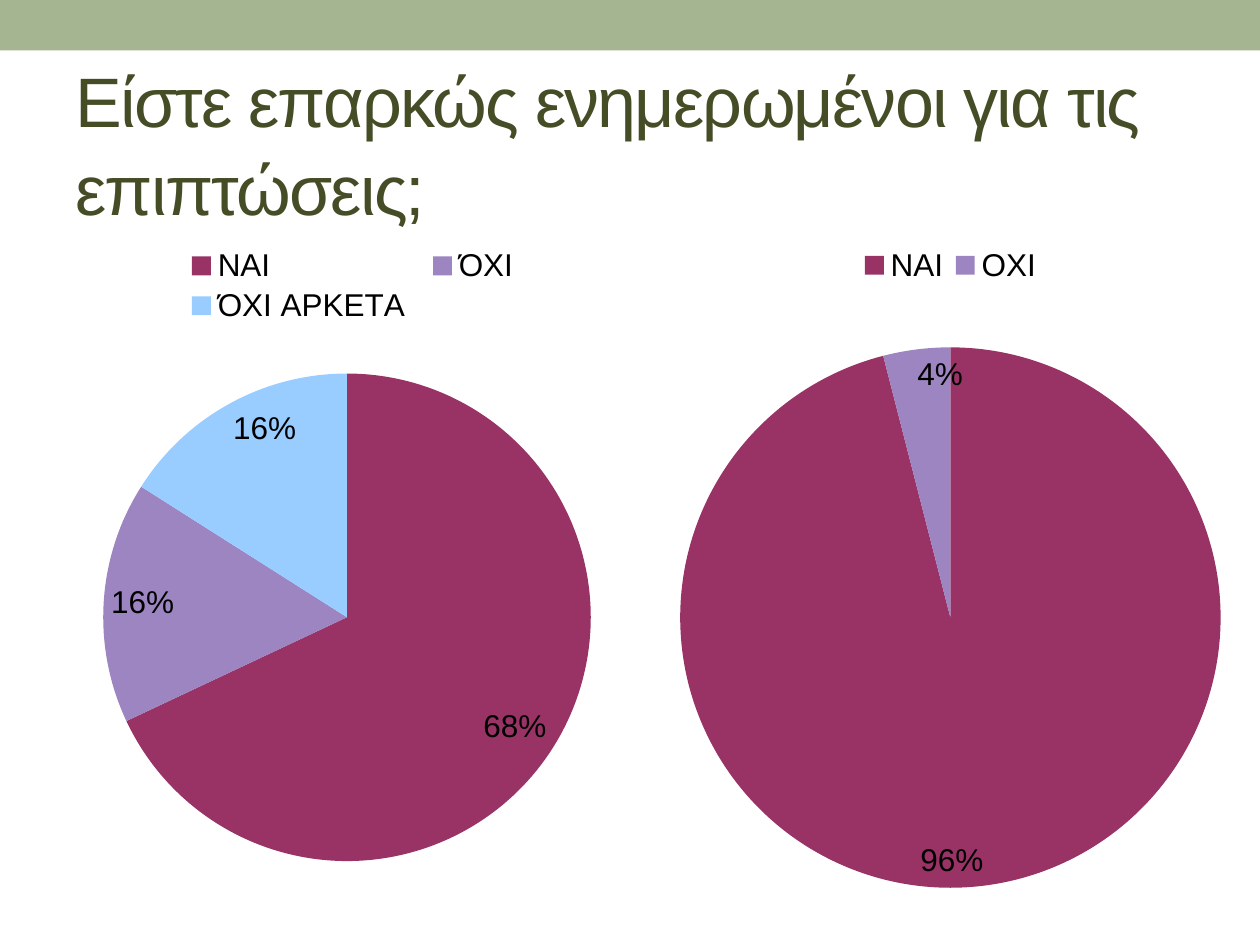
from lxml import etree
from pptx import Presentation
from pptx.chart.data import CategoryChartData as Data
from pptx.dml.color import RGBColor as RGB
from pptx.enum.chart import XL_CHART_TYPE as Kind, XL_LABEL_POSITION as Spot
from pptx.enum.chart import XL_LEGEND_POSITION as Side
from pptx.enum.shapes import MSO_SHAPE as Form
from pptx.enum.text import MSO_ANCHOR as Anchor
from pptx.oxml.ns import qn
from pptx.util import Inches, Pt

# Content: box is in inches, plot and key are fractions of the chart
TITLE = "Είστε επαρκώς ενημερωμένοι για τις επιπτώσεις;"
PIES = [
    {"box": (0.5, 1.83, 4.42, 5.16),
     "cats": ["ΝΑΙ", "ΌΧΙ", "ΌΧΙ ΑΡΚΕΤΑ"], "vals": [68, 16, 16],
     "plot": (0.07, 0.22, 0.88, 0.75), "key": (0.2, 0.02, 0.64, 0.13)},
    {"box": (5.16, 1.78, 4.72, 5.43),
     "cats": ["NAI", "OXI"], "vals": [96, 4],
     "plot": (0.05, 0.18, 0.91, 0.79), "key": (0.34, 0.02, 0.33, 0.08)},
]
THEME = {
    "font": "Arial", "title": Pt(40), "label": Pt(18),
    "band": RGB.from_string("A5B592"),
    "head": RGB.from_string("444D26"),
    "text": RGB.from_string("000000"),
    "slices": [RGB.from_string(c) for c in ("993366", "9C85C0", "99CCFF")],
}


def place(part, before, rect, inner=False):
    """Give a plot area or legend a fixed layout."""
    for old in part.findall(qn("c:layout")):
        part.remove(old)
    layout = etree.Element(qn("c:layout"))
    man = etree.SubElement(layout, qn("c:manualLayout"))
    rows = [("layoutTarget", "inner")] if inner else []
    rows += [("xMode", "edge"), ("yMode", "edge")]
    rows += [(tag, str(v)) for tag, v in zip("xywh", rect)]
    for tag, val in rows:
        etree.SubElement(man, qn("c:" + tag)).set("val", val)
    part.find(qn(before)).addprevious(layout)


def style(font):
    font.name, font.size = THEME["font"], THEME["label"]
    font.color.rgb = THEME["text"]


def add_pie(slide, pie):
    data = Data()
    data.categories = pie["cats"]
    data.add_series("Series 1", pie["vals"])
    box = [Inches(v) for v in pie["box"]]
    chart = slide.shapes.add_chart(Kind.PIE, *box, data).chart
    chart.has_title = False
    style(chart.font)

    # Legend
    chart.has_legend = True
    chart.legend.position = Side.TOP
    chart.legend.include_in_layout = False
    style(chart.legend.font)

    # Slices and percent labels
    plot = chart.plots[0]
    plot.vary_by_categories = True
    for i in range(len(pie["cats"])):
        fill = plot.series[0].points[i].format.fill
        fill.solid()
        fill.fore_color.rgb = THEME["slices"][i]
    plot.has_data_labels = True
    tags = plot.data_labels
    tags.show_percentage, tags.show_value = True, False
    tags.number_format, tags.number_format_is_linked = "0%", False
    tags.position = Spot.INSIDE_END
    style(tags.font)

    root = chart.element
    place(root.find(".//" + qn("c:plotArea")), "c:pieChart", pie["plot"], True)
    place(root.find(".//" + qn("c:legend")), "c:overlay", pie["key"])


deck = Presentation()
deck.slide_width, deck.slide_height = Inches(10), Inches(7.5)
slide = deck.slides.add_slide(deck.slide_layouts[6])

# Top band
band = slide.shapes.add_shape(Form.RECTANGLE, 0, 0, deck.slide_width, Inches(0.4))
band.shadow.inherit = False
band.fill.solid()
band.fill.fore_color.rgb = THEME["band"]
band.line.fill.background()

# Title
frame = slide.shapes.add_textbox(
    Inches(0.5), Inches(0.58), Inches(9), Inches(1.08)).text_frame
frame.word_wrap = True
frame.vertical_anchor = Anchor.MIDDLE
para = frame.paragraphs[0]
para.line_spacing = 1.05
run = para.add_run()
run.text = TITLE
run.font.name, run.font.size = THEME["font"], THEME["title"]
run.font.color.rgb = THEME["head"]
run.font._element.set("spc", "-100")

# Charts
for pie in PIES:
    add_pie(slide, pie)

deck.save("out.pptx")
